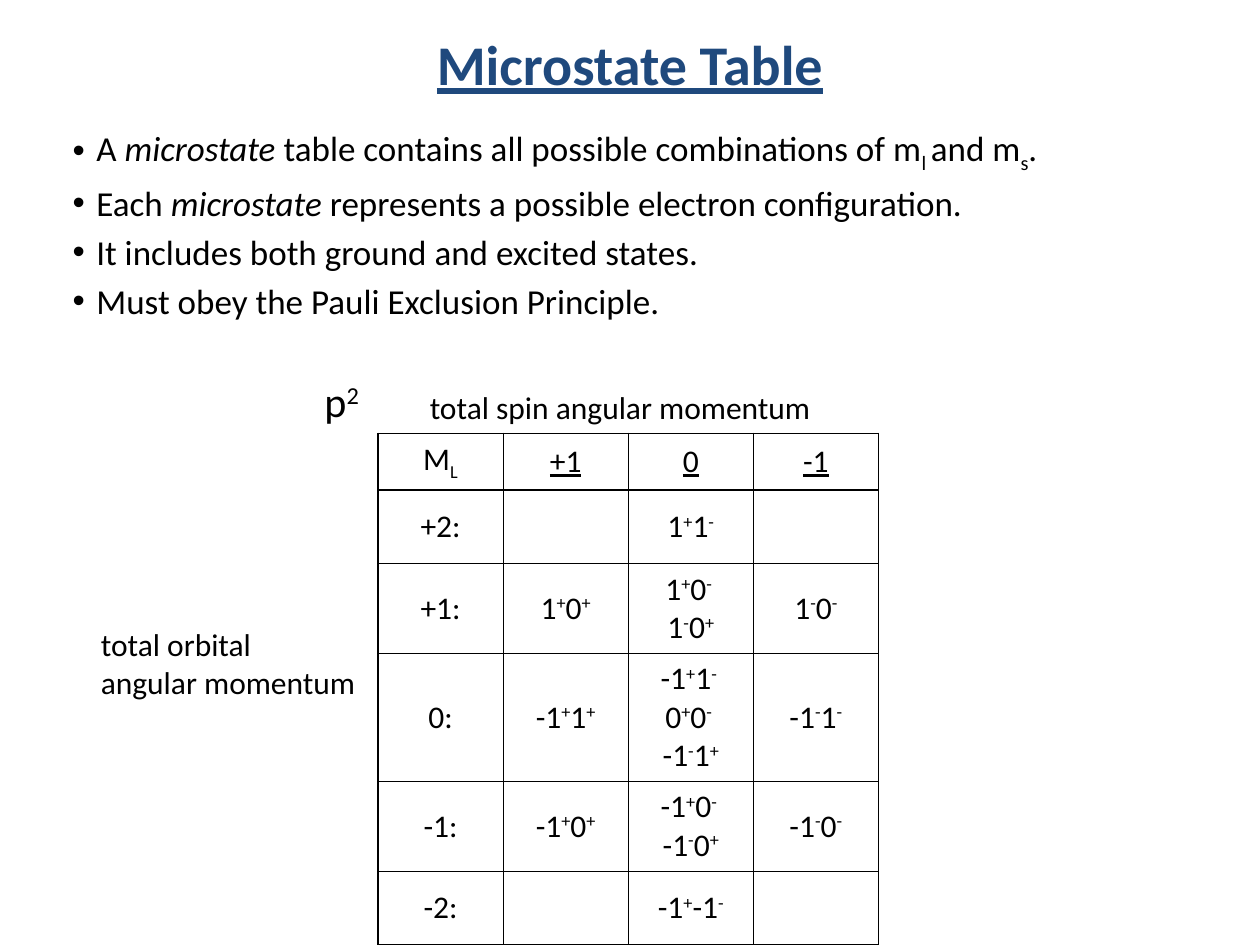
from lxml import etree
from pptx import Presentation
from pptx.dml.color import RGBColor
from pptx.enum.text import MSO_ANCHOR, PP_ALIGN
from pptx.oxml.ns import qn
from pptx.util import Pt

LEFT, CENTER = PP_ALIGN.LEFT, PP_ALIGN.CENTER
TOP, MIDDLE = MSO_ANCHOR.TOP, MSO_ANCHOR.MIDDLE
FONT, BLACK, NAVY = "Calibri", "000000", "1F497D"
BASES = {"^": "30000", "_": "-25000"}

POINTS = [
    "A *microstate *table contains all possible combinations of m_l _and m_s_.",
    "Each *microstate* represents a possible electron configuration.",
    "It includes both ground and excited states.",
    "Must obey the Pauli Exclusion Principle.",
]
HEAD = ["M_L_", "+1", "0", "-1"]
ROWS = [
    ["+2:", "", "1^+^1^-^", ""],
    ["+1:", "1^+^0^+^", "1^+^0^- ^|1^-^0^+^", "1^-^0^-^"],
    ["0:", "-1^+^1^+^", "-1^+^1^- ^|0^+^0^- ^|-1^-^1^+^", "-1^-^1^-^"],
    ["-1:", "-1^+^0^+^", "-1^+^0^- ^|-1^-^0^+^", "-1^-^0^-^"],
    ["-2:", "", "-1^+^-1^-^", ""],
]
HEIGHTS = [32.5, 42, 51.5, 73, 51.5, 42]


def color(code):
    return RGBColor.from_string(code)


def pieces(line):
    """Split a line into (text, open mark) pairs; ^ _ * toggle, | breaks."""
    text, mark = "", ""
    for char in line:
        if char not in "^_*|":
            text += char
            continue
        if text:
            yield text, mark
        text = ""
        if char == "|":
            yield "", "|"
        else:
            mark = "" if mark == char else char
    if text:
        yield text, mark


def write(frame, text, size=18, ink=BLACK, bold=False, under=False,
          align=LEFT, anchor=TOP, wrap=True, bullet=False, gap=0):
    """Fill a frame with one paragraph for each line of the marked text."""
    frame.word_wrap = wrap
    frame.vertical_anchor = anchor
    for index, line in enumerate(text.split("\n")):
        para = frame.add_paragraph() if index else frame.paragraphs[0]
        para.alignment = align
        if index and gap:
            para.space_before = Pt(gap)
        if bullet:
            props = para._p.get_or_add_pPr()
            props.set("marL", str(Pt(13.5)))
            props.set("indent", str(-Pt(13.5)))
            face = etree.SubElement(props, qn("a:buFont"))
            face.set("typeface", "Arial")
            etree.SubElement(props, qn("a:buChar")).set("char", "•")
        for part, mark in pieces(line):
            if mark == "|":
                para.add_line_break()
                continue
            run = para.add_run()
            run.text = part
            font = run.font
            font.name, font.size = FONT, Pt(size)
            font.bold, font.underline = bold, under
            font.italic = mark == "*"
            font.color.rgb = color(ink)
            if mark in BASES:
                run._r.get_or_add_rPr().set("baseline", BASES[mark])


def label(slide, box, text, **style):
    shape = slide.shapes.add_textbox(*map(Pt, box))
    write(shape.text_frame, text, **style)


def border(cell):
    props = cell._tc.get_or_add_tcPr()
    for index, side in enumerate(("lnL", "lnR", "lnT", "lnB")):
        line = etree.Element(qn("a:" + side), w=str(Pt(0.75)))
        fill = etree.SubElement(line, qn("a:solidFill"))
        etree.SubElement(fill, qn("a:srgbClr")).set("val", BLACK)
        props.insert(index, line)


def grid(slide, box):
    data = [HEAD] + ROWS
    table = slide.shapes.add_table(len(data), len(HEAD), *map(Pt, box)).table
    table.first_row = table.horz_banding = False
    for col in table.columns:
        col.width = Pt(box[2] / len(HEAD))
    for r, (row, high) in enumerate(zip(data, HEIGHTS)):
        table.rows[r].height = Pt(high)
        for c, text in enumerate(row):
            cell = table.cell(r, c)
            cell.fill.background()
            border(cell)
            cell.vertical_anchor = MIDDLE
            write(cell.text_frame, text, align=CENTER, anchor=None,
                  wrap=None, under=r == 0 and c > 0)


def states(slide, box):
    """Place the microstate grid with its axis labels around it."""
    x, y, wide, high = box
    grid(slide, box)
    label(slide, (x - 44.5, y - 36.5, 47.5, 36), "p^2^", size=24, align=CENTER)
    label(slide, (x + 22.5, y - 29.5, 239, 29), "total spin angular momentum",
          wrap=False)
    label(slide, (x - 165.5, y + 106, 165, 51),
          "total orbital\nangular momentum")


def main():
    deck = Presentation()
    deck.slide_width, deck.slide_height = Pt(720), Pt(540)
    slide = deck.slides.add_slide(deck.slide_layouts[6])
    label(slide, (36, 0, 648, 72), "Microstate Table", size=32, ink=NAVY,
          bold=True, under=True, align=CENTER, anchor=MIDDLE)
    label(slide, (34.5, 69, 648, 154), "\n".join(POINTS), size=20,
          bullet=True, gap=4)
    states(slide, (216, 247.5, 286, sum(HEIGHTS)))
    deck.save("out.pptx")


if __name__ == "__main__":
    main()
